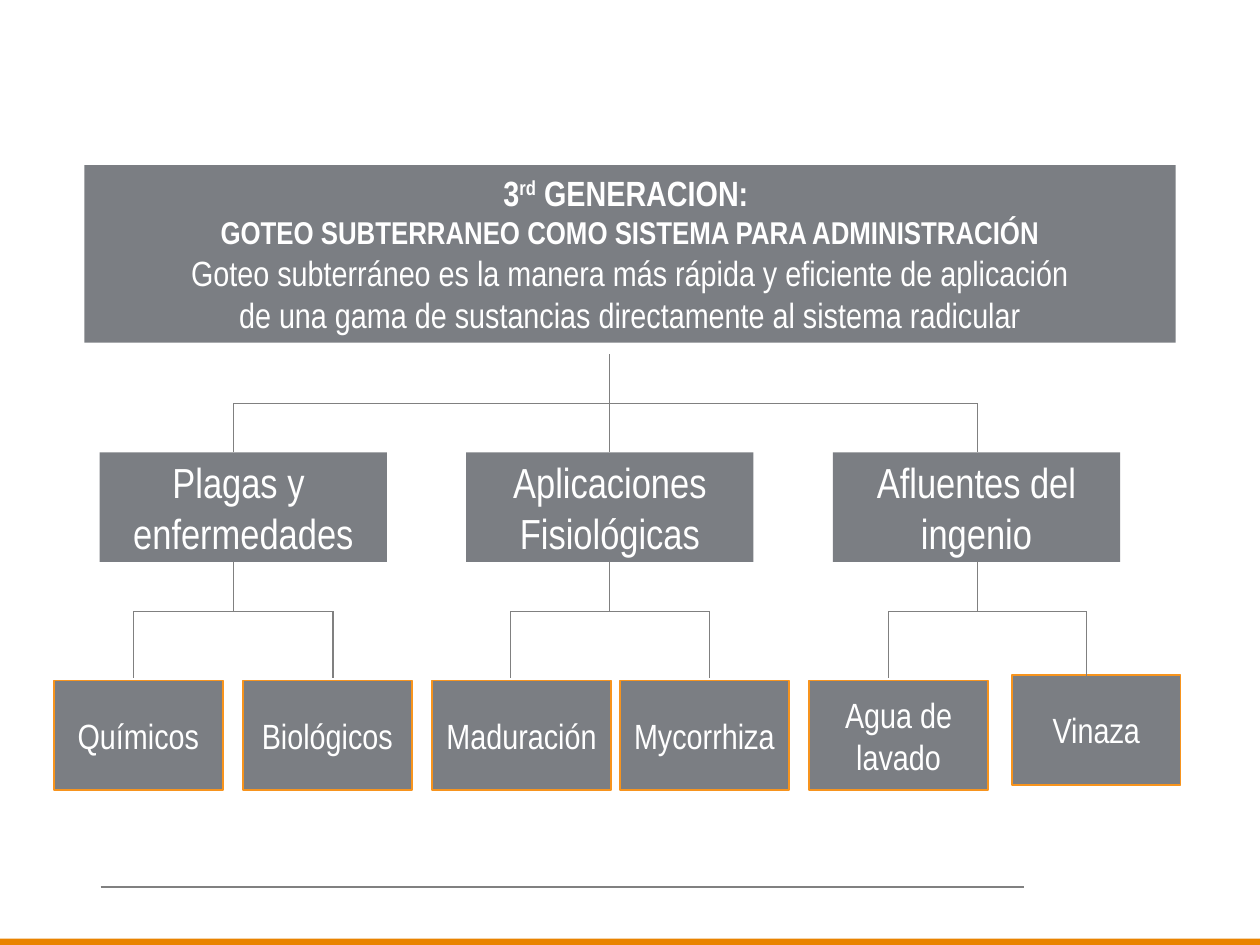
from dataclasses import dataclass

from pptx import Presentation, util as u
from pptx.dml.color import RGBColor
from pptx.enum import shapes, text
from pptx.util import Cm


@dataclass(frozen=True)
class Theme:
    font: str = "Arial Narrow"
    box: RGBColor = RGBColor(0x7B, 0x7E, 0x83)
    edge: RGBColor = RGBColor(0xF7, 0x94, 0x1E)
    bar: RGBColor = RGBColor(0xE9, 0x83, 0x00)
    line: RGBColor = RGBColor(0x80, 0x80, 0x80)
    white: RGBColor = RGBColor(0xFF, 0xFF, 0xFF)
    group_size: int = 24
    body_size: int = 20
    subtitle_size: int = 18


T = Theme()


def write(p, content, size=T.body_size, bold=False, raised=False):
    """Add text to a centred paragraph; a newline becomes a line break."""
    p.alignment = text.PP_ALIGN.CENTER
    for i, part in enumerate(content.split("\n")):
        if i:
            p.add_line_break()
        if not part:
            continue
        r = p.add_run()
        r.text = part
        r.font.name, r.font.size, r.font.bold = T.font, u.Pt(size), bold
        r.font.color.rgb = T.white
        if raised:
            r.font._element.set("baseline", "30000")


def add_box(left, top, width, height, fill=T.box, edge=None):
    """Add a flat rectangle, measured in cm, and return its text frame."""
    sp = s.shapes.add_shape(shapes.MSO_SHAPE.RECTANGLE,
                            Cm(left), Cm(top), Cm(width), Cm(height))
    sp.shadow.inherit = False
    sp.fill.solid()
    sp.fill.fore_color.rgb = fill
    if edge is None:
        sp.line.fill.background()
    else:
        sp.line.color.rgb = edge
        sp.line.width = u.Pt(1)
    tf = sp.text_frame
    tf.word_wrap = True
    tf.margin_left = tf.margin_right = Cm(0.1)
    tf.vertical_anchor = text.MSO_ANCHOR.MIDDLE
    return tf


prs = Presentation()
prs.slide_width, prs.slide_height = Cm(25.4), Cm(19.05)
s = prs.slides.add_slide(prs.slide_layouts[6])

add_box(0, 18.92, 25.4, 0.13, fill=T.bar)

# Heading
tf = add_box(1.7, 3.33, 22, 3.58)
tf.vertical_anchor = text.MSO_ANCHOR.TOP
p = tf.paragraphs[0]
write(p, "3", bold=True)
write(p, "rd", bold=True, raised=True)
write(p, " GENERACION: \n", bold=True)
write(p, "GOTEO SUBTERRANEO COMO SISTEMA PARA ADMINISTRACIÓN",
      size=T.subtitle_size, bold=True)
write(tf.add_paragraph(),
      "Goteo subterráneo es la manera más rápida y eficiente de aplicación\n"
      "de una gama de sustancias directamente al sistema radicular")

# Tree levels, in cm from the top
root_y, bus_y, group_y, fork_y, stem_end = 7.14, 8.13, 9.12, 12.32, 13.67
box_h = 2.21
group_bottom = group_y + box_h

# Group: name, left, trunk x, two stem x, then leaves (name, left, top, width)
groups = [
    ("Plagas y \nenfermedades", 2.01, 4.7, (2.69, 6.71),
     [("Químicos", 1.09, 13.72, 3.4), ("Biológicos", 4.9, 13.72, 3.4)]),
    ("Aplicaciones Fisiológicas", 9.4, 12.29, (10.29, 14.3),
     [("Maduración", 8.71, 13.72, 3.61), ("Mycorrhiza", 12.5, 13.72, 3.4)]),
    ("Afluentes del ingenio", 16.79, 19.71, (17.91, 21.9),
     [("Agua de lavado", 16.31, 13.72, 3.61), ("Vinaza", 20.4, 13.61, 3.4)]),
]

trunks = [group[2] for group in groups]
lines = [
    (2.03, 17.88, 20.65, 17.88),  # footer rule
    (trunks[1], root_y, trunks[1], bus_y),
    (trunks[0], bus_y, trunks[-1], bus_y),
]
for name, left, trunk, stems, leaves in groups:
    write(add_box(left, group_y, 5.79, box_h).paragraphs[0], name,
          size=T.group_size)
    for leaf, leaf_left, leaf_top, width in leaves:
        tf = add_box(leaf_left, leaf_top, width, box_h, edge=T.edge)
        write(tf.paragraphs[0], leaf)
    lines += [(trunk, bus_y, trunk, group_y),
              (trunk, group_bottom, trunk, fork_y),
              (stems[0], fork_y, stems[1], fork_y)]
    lines += [(x, fork_y, x, stem_end) for x in stems]

for ends in lines:
    line = s.shapes.add_connector(shapes.MSO_CONNECTOR.STRAIGHT,
                                  *[Cm(v) for v in ends])
    line.line.color.rgb = T.line
    line.line.width = u.Pt(0.75)
    line._element.spPr.get_or_add_ln().addnext(
        line._element.spPr.makeelement(
            "{http://schemas.openxmlformats.org/drawingml/2006/main}effectLst"))

prs.save("out.pptx")
